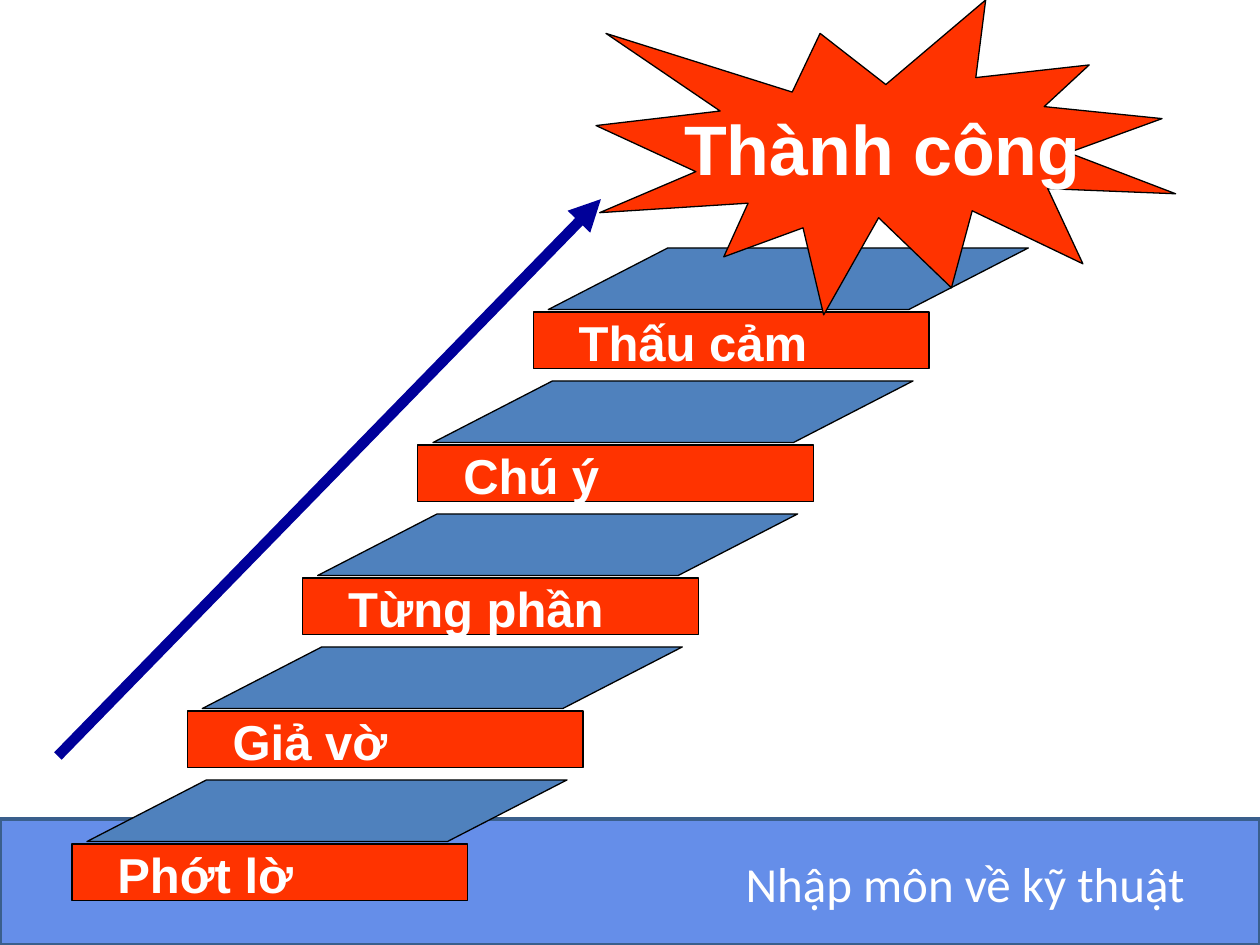
from dataclasses import dataclass

from lxml.etree import SubElement
from pptx import Presentation
from pptx.dml.color import RGBColor
from pptx.enum.shapes import MSO_CONNECTOR, MSO_SHAPE
from pptx.enum.text import MSO_ANCHOR, PP_ALIGN
from pptx.oxml.ns import qn
from pptx.util import Pt


@dataclass(frozen=True)
class Theme:
    white: str = "FFFFFF"
    black: str = "000000"
    red: str = "FF3300"
    blue: str = "4F81BD"
    navy: str = "000099"
    footer: str = "658EE9"
    footer_line: str = "3A5F8C"
    heading_font: str = "Arial"
    footer_font: str = "Calibri"
    label_size: int = 28
    burst_size: int = 40


THEME = Theme()
STEPS = ["Phớt lờ", "Giả vờ", "Từng phần", "Chú ý", "Thấu cảm"]
STEP_RIGHT, STEP_UP = 65.9, 76
RISER = (41.1, 482.3, 226.2, 32.4)
TREAD = (49.7, 445.7, 274.3, 35.2)


def add_block(slide, kind, bounds, fill, line=THEME.black, width=0.75):
    """Add a filled and outlined preset shape."""
    block = slide.shapes.add_shape(kind, *map(Pt, bounds))
    block.shadow.inherit = False
    block.fill.solid()
    block.fill.fore_color.rgb = RGBColor.from_string(fill)
    block.line.color.rgb = RGBColor.from_string(line)
    block.line.width = Pt(width)
    return block


def write_text(box, text, font, frame_format, align=PP_ALIGN.LEFT):
    """Write one line of text, formatted from dicts of values."""
    frame = box.text_frame
    for name, value in frame_format.items():
        setattr(frame, name, value)
    para = frame.paragraphs[0]
    para.alignment = align
    span = para.add_run()
    span.text = text
    for name, value in font.items():
        setattr(span.font, name, value)
    span.font.color.rgb = RGBColor.from_string(THEME.white)


def add_footer(slide):
    add_block(slide, MSO_SHAPE.RECTANGLE, (0, 468, 720, 72),
              THEME.footer, THEME.footer_line, 2)
    box = slide.shapes.add_textbox(Pt(419), Pt(484), Pt(270), Pt(41))
    font = {"name": THEME.footer_font, "size": Pt(THEME.label_size)}
    write_text(box, "Nhập môn về kỹ thuật", font, {"word_wrap": True})


def add_step(slide, index, label):
    """Add a labelled riser and its slanted tread."""
    def climb(bounds):
        left, top, width, height = bounds
        return left + index * STEP_RIGHT, top - index * STEP_UP, width, height

    riser = add_block(slide, MSO_SHAPE.RECTANGLE, climb(RISER), THEME.red)
    font = {"name": THEME.heading_font, "size": Pt(THEME.label_size), "bold": True}
    write_text(riser, label, font, {
        "word_wrap": True, "vertical_anchor": MSO_ANCHOR.MIDDLE,
        "margin_left": Pt(26), "margin_right": 0,
        "margin_top": Pt(2), "margin_bottom": 0,
    })
    tread = add_block(slide, MSO_SHAPE.PARALLELOGRAM, climb(TREAD), THEME.blue)
    tread.adjustments[0] = 1.94


def add_burst(slide):
    burst = add_block(slide, MSO_SHAPE.EXPLOSION1, (340.6, 0, 331.2, 180), THEME.red)
    font = {"name": THEME.heading_font, "size": Pt(THEME.burst_size), "bold": True}
    write_text(burst, "Thành công", font,
               {"word_wrap": False, "vertical_anchor": MSO_ANCHOR.MIDDLE},
               PP_ALIGN.CENTER)


def add_arrow(slide, start, end):
    arrow = slide.shapes.add_connector(MSO_CONNECTOR.STRAIGHT, *map(Pt, start + end))
    arrow.line.color.rgb = RGBColor.from_string(THEME.navy)
    arrow.line.width = Pt(6)
    SubElement(arrow.line._get_or_add_ln(), qn("a:tailEnd"), type="triangle")
    SubElement(arrow._element.spPr, qn("a:effectLst"))


def main():
    deck = Presentation()
    deck.slide_width, deck.slide_height = Pt(720), Pt(540)
    slide = deck.slides.add_slide(deck.slide_layouts[6])

    # Footer band
    add_footer(slide)

    # Staircase, from the bottom step up
    for index, label in enumerate(STEPS):
        add_step(slide, index, label)

    # Goal and the way up to it
    add_burst(slide)
    add_arrow(slide, (33.1, 432), (343.4, 113.8))

    deck.save("out.pptx")


if __name__ == "__main__":
    main()
